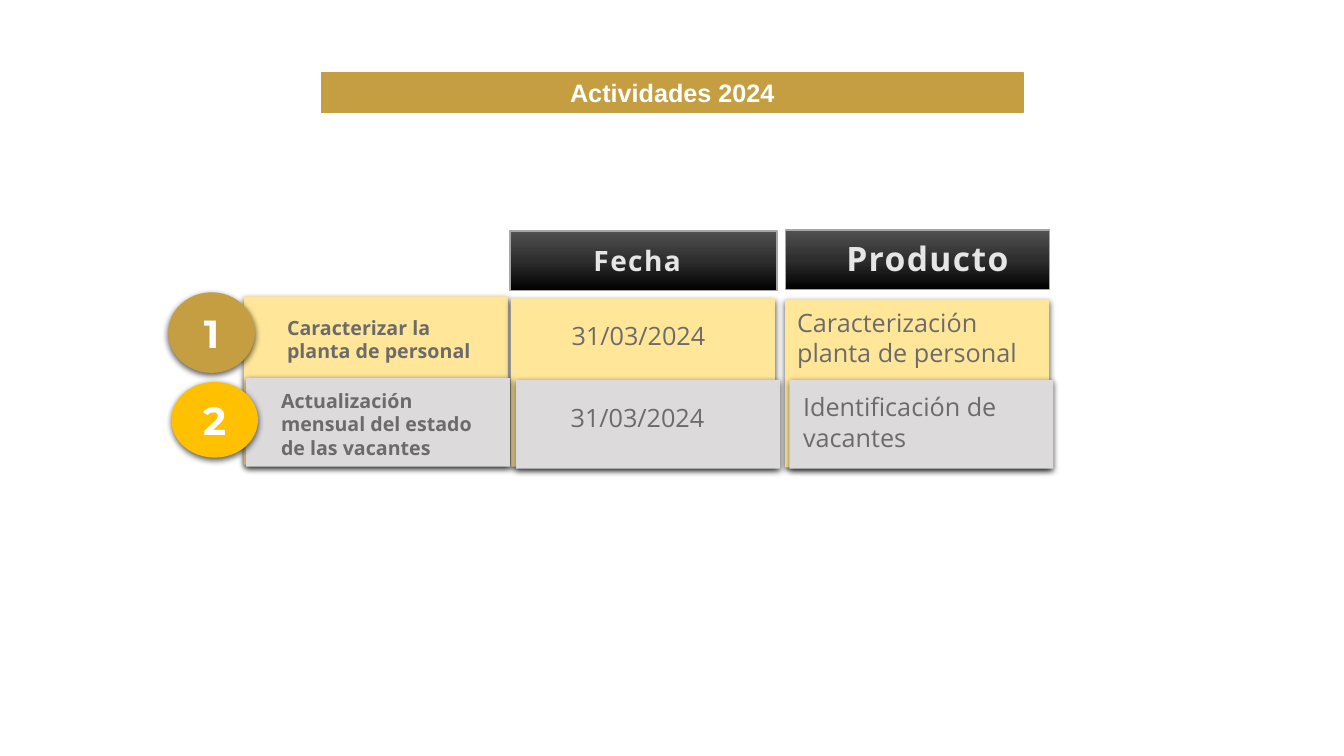
from copy import deepcopy
from lxml import etree
from pptx import Presentation
from pptx.dml.color import RGBColor
from pptx.enum import shapes, text
from pptx.oxml.ns import qn
from pptx.util import Pt

# Content: boxes are (left, top, width, height) in points
TITLE = ("Actividades 2024", (229.7, 51.8, 501.1, 28.8))
HEADERS = [
    {"label": "Fecha", "size": "fecha", "bar": (364.3, 164.9, 190.8, 42.5),
     "label_box": (376.6, 169.9, 157, 31.7)},
    {"label": "Producto", "size": "producto", "bar": (560.9, 164.2, 188.6, 42.5),
     "label_box": (583.9, 166.3, 157, 36)},
]
ROWS = [
    {"number": "1", "badge": (120.2, 208.8, 61.9, 57.6), "badge_color": "gold",
     "color": "cream", "height": 120.2,
     "corners": [(174.2, 211.7), (365, 213.1), (560.9, 213.8)],
     "cells": [("Caracterizar la planta de personal", (198, 221.8, 149, 41)),
               ("31/03/2024", (381.6, 225.4, 149, 28.8)),
               ("Caracterización planta de personal", (562.3, 215.3, 192.2, 51.1))]},
    {"number": "2", "badge": (122.4, 272.9, 61.9, 54), "badge_color": "amber",
     "color": "silver", "height": 63.4,
     "corners": [(175.7, 270), (368.6, 271.4), (563.8, 271.4)],
     "cells": [("Actualización mensual del estado de las vacantes",
                (193.7, 273.6, 153.4, 58.3)),
               ("31/03/2024", (380.9, 283.7, 149, 28.8)),
               ("Identificación de vacantes", (566.6, 275.8, 199.4, 51.1))]},
]
CELL_WIDTH = 188.6

THEME = {
    "color": {"gold": "C49E41", "amber": "FFC000", "cream": "FFE699", "silver": "DCDADA",
              "white": "FFFFFF", "header": "E7E6E6", "body": "6B6B6B", "border": "A6A6A6"},
    "gradient": [(0, "515151"), (0.5, "2E2E2E"), (1, "000000")],
    "size": {"title": 18, "fecha": 20, "producto": 24, "activity": 14, "body": 18,
             "number": 28},
    "font": {"title": "Arial", "number": "Montserrat", "body": "Open Sans"},
}
LEFT, CENTER = text.PP_ALIGN.LEFT, text.PP_ALIGN.CENTER


def rgb(name):
    return RGBColor.from_string(THEME["color"][name])


def add_panel(slide, box, fill=None, line=None, shadow=False,
              kind=shapes.MSO_SHAPE.RECTANGLE):
    """Add a filled shape; without a fill colour it gets the dark gradient."""
    panel = slide.shapes.add_shape(kind, *map(Pt, box))
    if fill:
        panel.fill.solid()
        panel.fill.fore_color.rgb = rgb(fill)
    else:
        fill_with_gradient(panel)
    if line:
        panel.line.color.rgb = rgb(line)
        panel.line.width = Pt(1)
    else:
        panel.line.fill.background()
    panel.shadow.inherit = False
    if shadow:
        cast_shadow(panel)
    return panel


def fill_with_gradient(panel):
    panel.fill.gradient()
    panel.fill.gradient_angle = 270
    stop_list = panel._element.spPr.find(".//" + qn("a:gsLst"))
    stop_list.insert(1, deepcopy(stop_list[0]))
    for stop, (position, color) in zip(panel.fill.gradient_stops, THEME["gradient"]):
        stop.position = position
        stop.color.rgb = RGBColor.from_string(color)


def cast_shadow(panel):
    effects = panel._element.spPr.find(qn("a:effectLst"))
    outer = etree.SubElement(effects, qn("a:outerShdw"), blurRad=str(Pt(4.5)),
                             dist=str(Pt(1.5)), dir="5400000", algn="ctr",
                             rotWithShape="0")
    black = etree.SubElement(outer, qn("a:srgbClr"), val="000000")
    etree.SubElement(black, qn("a:alpha"), val="63000")


def write(shape, words, *, size, color, font="body", bold=False, align=CENTER,
          spacing=0, margins=None):
    frame = shape.text_frame
    frame.word_wrap = True
    frame.vertical_anchor = text.MSO_ANCHOR.MIDDLE
    if margins is not None:
        frame.margin_left = frame.margin_right = Pt(margins)
        frame.margin_top = frame.margin_bottom = Pt(margins)
    paragraph = frame.paragraphs[0]
    paragraph.alignment = align
    run = paragraph.add_run()
    run.text = words
    run.font.name = THEME["font"][font]
    run.font.size = Pt(THEME["size"][size])
    run.font.bold = bold
    run.font.color.rgb = rgb(color)
    if spacing:
        run.font._element.set("spc", str(spacing * 100))


def add_label(slide, words, box, **style):
    write(slide.shapes.add_textbox(*map(Pt, box)), words, **style)


def main():
    deck = Presentation()
    deck.slide_width, deck.slide_height = Pt(960), Pt(540)
    slide = deck.slides.add_slide(deck.slide_layouts[6])

    for row in ROWS:
        for corner in row["corners"]:
            add_panel(slide, (*corner, CELL_WIDTH, row["height"]), row["color"], shadow=True)

    for header in HEADERS:
        add_panel(slide, header["bar"], line="border")
        add_label(slide, header["label"], header["label_box"], size=header["size"],
                  color="header", bold=True, spacing=1)

    column_styles = [{"size": "activity", "bold": True, "align": LEFT},
                     {"size": "body"},
                     {"size": "body", "align": LEFT}]
    for row in ROWS:
        badge = add_panel(slide, row["badge"], row["badge_color"], shadow=True,
                          kind=shapes.MSO_SHAPE.OVAL)
        write(badge, row["number"], size="number", color="white", font="number",
              bold=True, margins=0)
        for (words, box), style in zip(row["cells"], column_styles):
            add_label(slide, words, box, color="body", **style)

    words, box = TITLE
    write(add_panel(slide, box, "gold", line="gold"), words, size="title",
          color="white", font="title", bold=True)
    deck.save("out.pptx")


if __name__ == "__main__":
    main()
